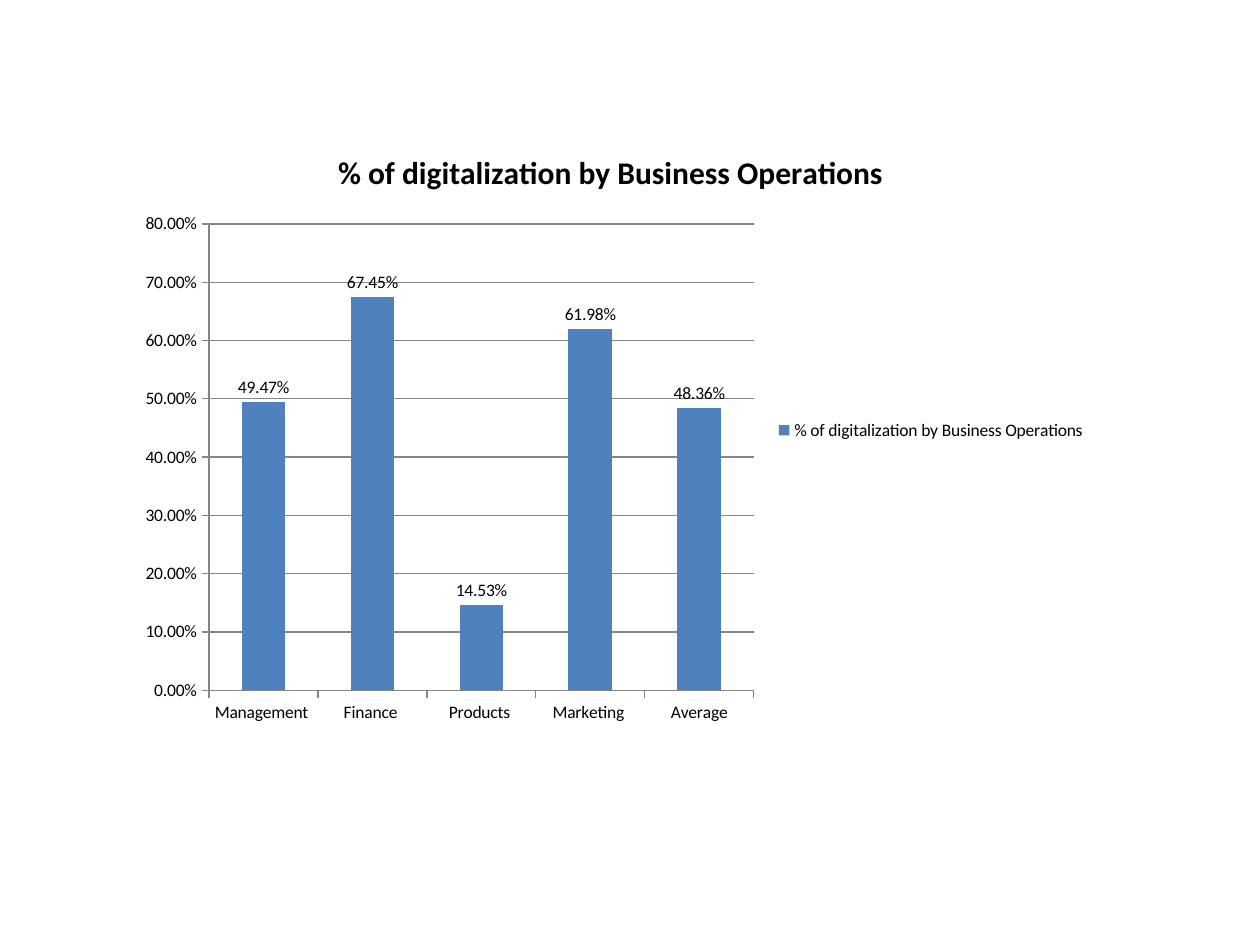
import pptx
import pptx.chart.data
import pptx.dml.color
import pptx.enum.chart
import pptx.util

# Content
TITLE = "% of digitalization by Business Operations "
SHARES = {
    "Management ": 0.4947,
    "Finance ": 0.6745,
    "Products ": 0.1453,
    "Marketing ": 0.6198,
    "Average": 0.4836,
}
FORMAT = "0.00%"
FONT = "Calibri"
COLORS = {"bar": "4F81BD", "text": "000000", "line": "868686"}
BOX = (1, 1, 7.75, 4.83)


def color(name):
    return pptx.dml.color.RGBColor.from_string(COLORS[name])


def style(font, size, bold=False):
    font.name = FONT
    font.size = pptx.util.Pt(size)
    font.bold = bold
    font.color.rgb = color("text")


def rule(line):
    line.color.rgb = color("line")
    line.width = pptx.util.Pt(0.75)


# Slide
deck = pptx.Presentation()
deck.slide_width = pptx.util.Inches(10)
deck.slide_height = pptx.util.Inches(7.5)
slide = deck.slides.add_slide(deck.slide_layouts[6])

# Chart
data = pptx.chart.data.CategoryChartData(number_format=FORMAT)
data.categories = list(SHARES)
data.add_series(TITLE, list(SHARES.values()))
kinds = pptx.enum.chart
chart = slide.shapes.add_chart(
    kinds.XL_CHART_TYPE.COLUMN_CLUSTERED,
    *map(pptx.util.Inches, BOX), data).chart
style(chart.font, 10)

# Title and legend
chart.has_title = True
head = chart.chart_title.text_frame
head.text = TITLE
style(head.paragraphs[0].font, 18, True)
chart.chart_title.include_in_layout = False
chart.has_legend = True
chart.legend.position = kinds.XL_LEGEND_POSITION.RIGHT
chart.legend.include_in_layout = False

# Axes
for axis in (chart.category_axis, chart.value_axis):
    axis.major_tick_mark = kinds.XL_TICK_MARK.OUTSIDE
    axis.minor_tick_mark = kinds.XL_TICK_MARK.NONE
    rule(axis.format.line)
scale = chart.value_axis
scale.minimum_scale, scale.maximum_scale, scale.major_unit = 0, 0.8, 0.1
scale.tick_labels.number_format = FORMAT
scale.tick_labels.number_format_is_linked = False
scale.has_major_gridlines = True
rule(scale.major_gridlines.format.line)

# Columns and their labels
plot = chart.plots[0]
plot.gap_width = 150
plot.vary_by_categories = False
bars = plot.series[0]
bars.format.fill.solid()
bars.format.fill.fore_color.rgb = color("bar")
labels = bars.data_labels
labels.show_value = True
labels.number_format = FORMAT
labels.number_format_is_linked = False
labels.position = kinds.XL_LABEL_POSITION.OUTSIDE_END
style(labels.font, 10)

deck.save("out.pptx")
